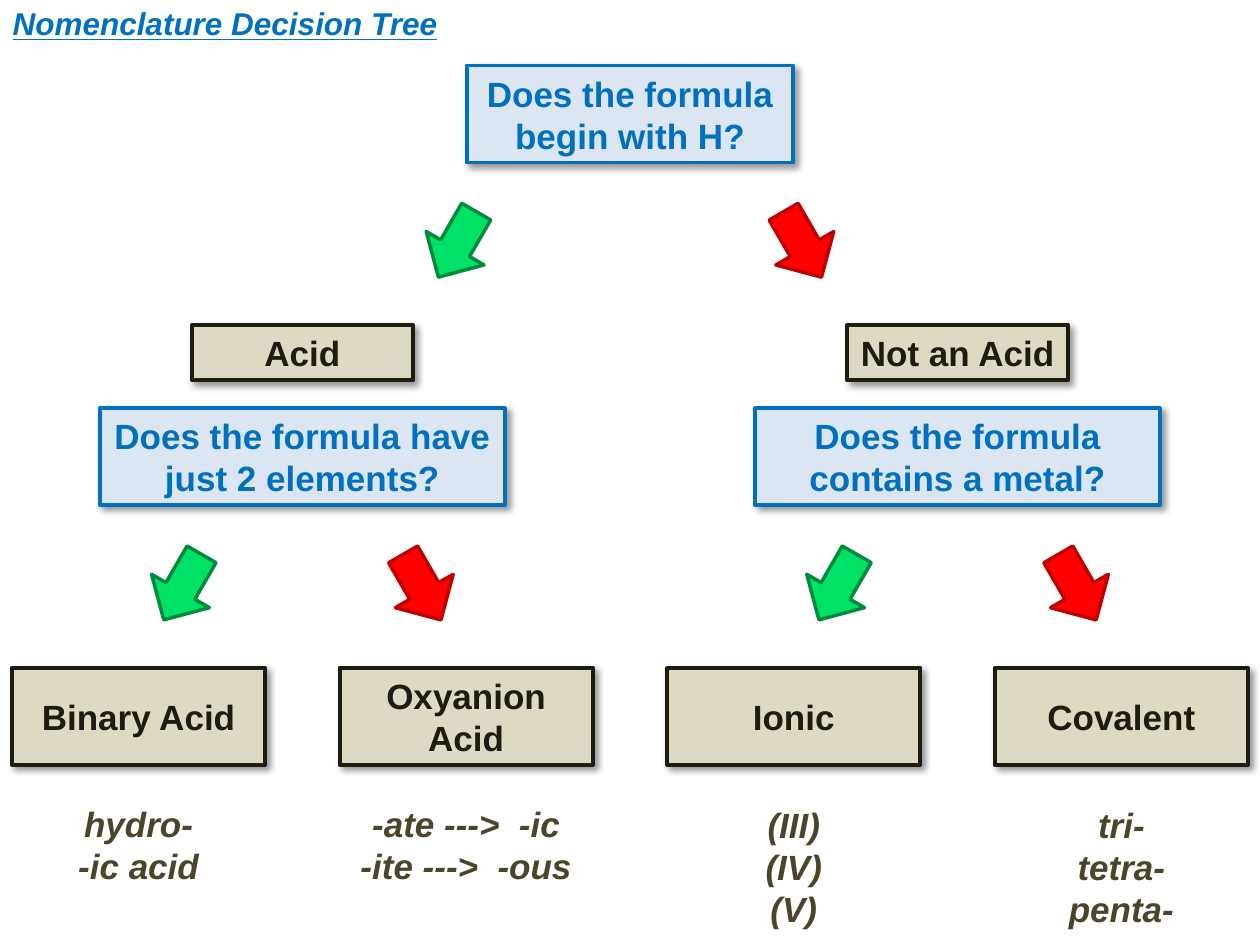
"""Builds the nomenclature decision tree slide."""
from lxml import etree
from pptx import Presentation
from pptx.dml.color import RGBColor
from pptx.enum import shapes, text
from pptx.oxml import ns
from pptx.util import Inches, Pt

BLUE, PALE, INK, TAN, OLIVE = "0070C0", "DCE6F2", "1E1C11", "DDD9C3", "4A452A"
QUESTION, ANSWER, NOTE = (PALE, BLUE, BLUE), (TAN, INK, INK), ("FFFFFF", None, OLIVE)
SHADOW = (
    f'<a:effectLst {ns.nsdecls("a")}><a:outerShdw blurRad="50800" dist="38100" dir="2700000" '
    'algn="tl" rotWithShape="0"><a:srgbClr val="000000"><a:alpha val="40000"/>'
    '</a:srgbClr></a:outerShdw></a:effectLst>'
)


def rgb(value):
    return RGBColor.from_string(value)


def add_box(center, top, width, height, lines, style, wrap=False):
    fill, line, ink = style
    sp = s.shapes.add_shape(shapes.MSO_SHAPE.RECTANGLE, Inches(center - width / 2),
                            Inches(top), Inches(width), Inches(height))
    sp.shadow.inherit = False
    sp.fill.solid()
    sp.fill.fore_color.rgb = rgb(fill)
    if line:
        sp.line.color.rgb = rgb(line)
        sp.line.width = Pt(2.25)
        effects = sp._element.spPr.find(ns.qn("a:effectLst"))
        effects.getparent().replace(effects, etree.fromstring(SHADOW))
    else:
        sp.line.fill.background()
    tf = sp.text_frame
    tf.word_wrap = wrap
    tf.vertical_anchor = text.MSO_ANCHOR.MIDDLE
    for i, line_text in enumerate(lines):
        p = tf.paragraphs[0] if i == 0 else tf.add_paragraph()
        p.alignment = text.PP_ALIGN.CENTER
        r = p.add_run()
        r.text = line_text
        r.font.color.rgb = rgb(ink)
        fmt = {"name": "Arial", "size": Pt(20), "bold": True, "italic": style is NOTE}
        for key, value in fmt.items():
            setattr(r.font, key, value)


prs = Presentation()
prs.slide_width, prs.slide_height = Inches(10), Inches(7.5)
s = prs.slides.add_slide(prs.slide_layouts[5])

title = s.shapes.title
for key, value in {"left": 0, "top": 0, "width": 4.09, "height": 0.37}.items():
    setattr(title, key, Inches(value))
tf = title.text_frame
tf.vertical_anchor = text.MSO_ANCHOR.MIDDLE
p = tf.paragraphs[0]
p.alignment = text.PP_ALIGN.LEFT
r = p.add_run()
r.text = "Nomenclature Decision Tree"
r.font.color.rgb = rgb(BLUE)
fmt = {"name": "Arial", "size": Pt(18), "bold": True, "italic": True, "underline": True}
for key, value in fmt.items():
    setattr(r.font, key, value)

add_box(5, 0.52, 2.59, 0.77, ["Does the formula begin with H?"], QUESTION, wrap=True)

branches = [
    (2.4, "Acid", ["Does the formula have", "just 2 elements?"]),
    (7.6, "Not an Acid", ["Does the formula", "contains a metal?"]),
]
for center, answer, question in branches:
    add_box(center, 2.58, 1.75, 0.44, [answer], ANSWER)
    add_box(center, 3.24, 3.21, 0.77, question, QUESTION)

outcomes = [
    (["Binary Acid"], ["hydro-", "-ic acid"]),
    (["Oxyanion", "Acid"], ["-ate --->  -ic", "-ite --->  -ous"]),
    (["Ionic"], ["(III)", "(IV)", "(V)"]),
    (["Covalent"], ["tri-", "tetra-", "penta-"]),
]
for i, (name, note) in enumerate(outcomes):
    center = 5 + (i - 1.5) * 2.6
    add_box(center, 5.3, 2.01, 0.77, name, ANSWER)
    add_box(center, 6.32, 2.01, 0.77 if len(note) == 2 else 1.11, note, NOTE)

for center, top, offset in [(5, 1.64, 1.37), (2.4, 4.36, 0.95), (7.6, 4.36, 0.95)]:
    for side, angle, fill, line in [(-1, 30, "00E266", "008A3E"), (1, 330, "FF0000", "C00000")]:
        sp = s.shapes.add_shape(shapes.MSO_SHAPE.DOWN_ARROW,
                                Inches(center + side * offset - 0.265), Inches(top),
                                Inches(0.53), Inches(0.6))
        sp.rotation = angle
        sp.shadow.inherit = False
        sp.fill.solid()
        sp.fill.fore_color.rgb = rgb(fill)
        sp.line.color.rgb = rgb(line)
        sp.line.width = Pt(2)

prs.save("out.pptx")
